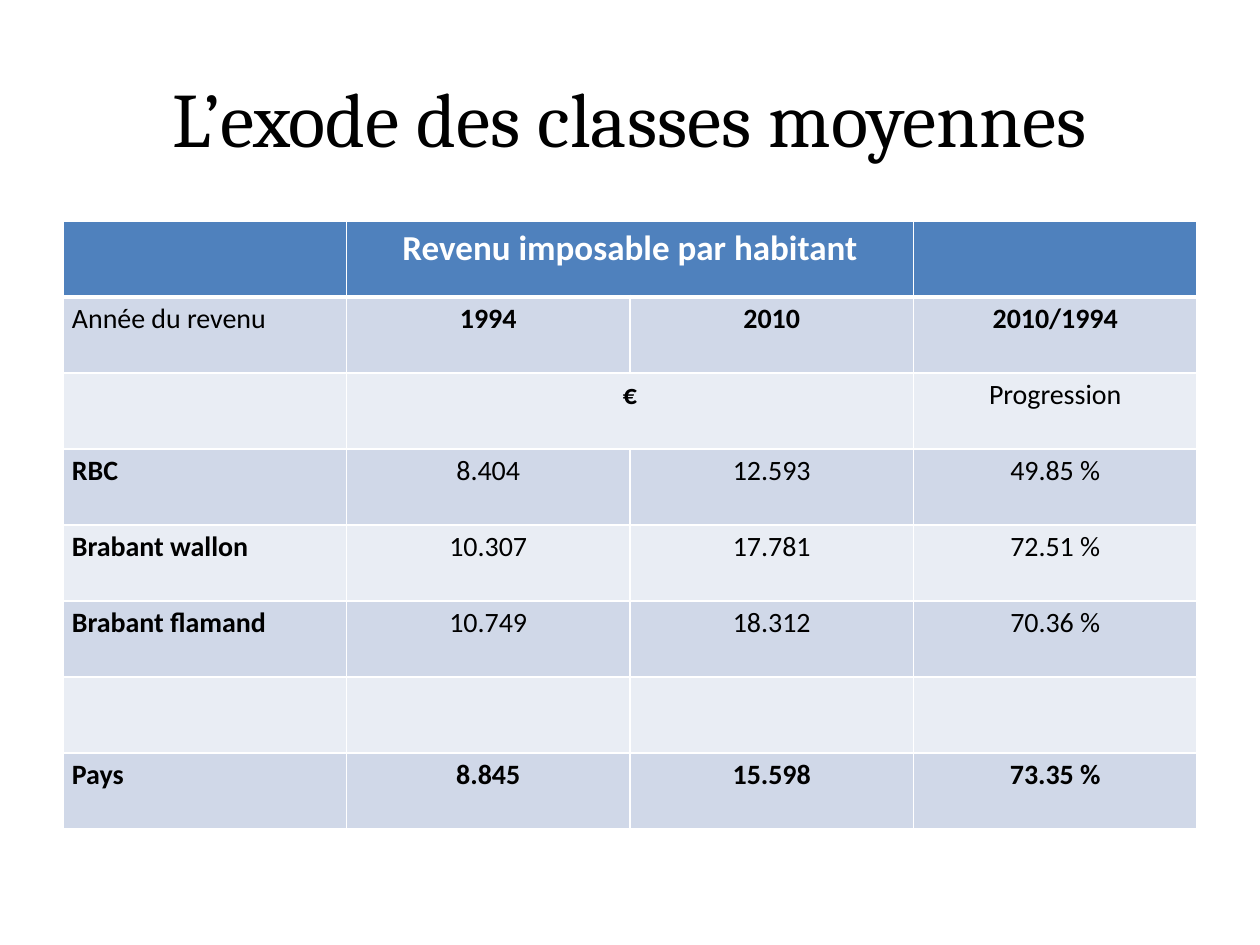
"""Build the slide on taxable income per inhabitant."""
import dataclasses

import lxml.etree
import pptx
import pptx.dml.color
import pptx.enum.text
import pptx.oxml.ns
import pptx.util

EMU_PER_PX = 914400 // 126
ALIGN = pptx.enum.text.PP_ALIGN
HEADER_FILL, ODD_FILL, EVEN_FILL = "4F81BD", "D0D8E8", "E9EDF4"
WHITE, BLACK = "FFFFFF", "000000"
COLUMN_WIDTH, ROW_HEIGHT, INSET = 2835 // 10, 76, 9


@dataclasses.dataclass(frozen=True)
class Entry:
    """Content of one table cell."""
    text: str = ""
    bold: bool = False
    align: ALIGN = ALIGN.CENTER
    span: int = 1


def px(length: int) -> int:
    """Turn pixels into EMU."""
    return pptx.util.Emu(length * EMU_PER_PX)


def colour(value: str) -> pptx.dml.color.RGBColor:
    """Turn a hex string into a colour."""
    return pptx.dml.color.RGBColor.from_string(value)


def add_run(paragraph, text: str, font: str, size: int, ink: str, bold: bool) -> None:
    """Add one formatted run to a paragraph."""
    run = paragraph.add_run()
    run.text = text
    run.font.name = font
    run.font.size = pptx.util.Pt(size)
    run.font.bold = bold
    run.font.color.rgb = colour(ink)


def set_borders(cell, top: int, bottom: int) -> None:
    """Give a cell white borders, with top and bottom widths in points."""
    properties = cell._tc.get_or_add_tcPr()
    sides = {"lnL": 1, "lnR": 1, "lnT": top, "lnB": bottom}
    for position, (side, width) in enumerate(sides.items()):
        line = lxml.etree.Element(pptx.oxml.ns.qn(f"a:{side}"), w=str(pptx.util.Pt(width)))
        fill = lxml.etree.SubElement(line, pptx.oxml.ns.qn("a:solidFill"))
        lxml.etree.SubElement(fill, pptx.oxml.ns.qn("a:srgbClr"), val=WHITE)
        properties.insert(position, line)


def style_cell(cell, row: int) -> None:
    """Set the fill and borders that belong to a row."""
    cell.fill.solid()
    cell.fill.fore_color.rgb = colour(
        HEADER_FILL if row == 0 else ODD_FILL if row % 2 else EVEN_FILL)
    set_borders(cell, top=3 if row == 1 else 1, bottom=3 if row == 0 else 1)


def write_entry(cell, entry: Entry, row: int) -> None:
    """Write the text of one cell."""
    cell.margin_left = cell.margin_right = px(INSET)
    cell.margin_top = cell.margin_bottom = 0
    paragraph = cell.text_frame.paragraphs[0]
    paragraph.alignment = entry.align
    paragraph.line_spacing = 1.15
    size, ink = (20, WHITE) if row == 0 else (16, BLACK)
    add_run(paragraph, entry.text, "Calibri", size, ink, entry.bold)


def region(name: str, *figures: str, bold: bool = False) -> list[Entry]:
    """Make the row of one region."""
    return [Entry(name, True, ALIGN.LEFT), *(Entry(figure, bold) for figure in figures)]


def add_income_table(slide, rows: list[list[Entry]]) -> None:
    """Add the income table."""
    columns = 4
    table = slide.shapes.add_table(
        len(rows), columns, px(63), px(221),
        px(columns * COLUMN_WIDTH), px(len(rows) * ROW_HEIGHT)).table
    for column in table.columns:
        column.width = pptx.util.Inches(2.25)
    for row, entries in enumerate(rows):
        table.rows[row].height = px(ROW_HEIGHT)
        for column in range(columns):
            style_cell(table.cell(row, column), row)
        column = 0
        for entry in entries:
            cell = table.cell(row, column)
            if entry.span > 1:
                cell.merge(table.cell(row, column + entry.span - 1))
            if entry.text:
                write_entry(cell, entry, row)
            column += entry.span


def add_title(slide, text: str) -> None:
    """Fill and place the title."""
    title = slide.shapes.title
    title.left, title.top, title.width, title.height = map(px, (63, 38, 1134, 157))
    title.text_frame.vertical_anchor = pptx.enum.text.MSO_ANCHOR.MIDDLE
    paragraph = title.text_frame.paragraphs[0]
    paragraph.alignment = ALIGN.CENTER
    add_run(paragraph, text, "Cambria", 44, BLACK, False)


def main() -> None:
    """Build and save the presentation."""
    presentation = pptx.Presentation()
    presentation.slide_width, presentation.slide_height = px(1260), px(945)
    slide = presentation.slides.add_slide(presentation.slide_layouts[5])
    add_title(slide, "L’exode des classes moyennes")
    add_income_table(slide, [
        [Entry(), Entry("Revenu imposable par habitant", True, span=2), Entry()],
        [Entry("Année du revenu", align=ALIGN.JUSTIFY),
         *(Entry(year, True) for year in ("1994", "2010", "2010/1994"))],
        [Entry(), Entry("€", True, span=2), Entry("Progression")],
        region("RBC", "8.404", "12.593", "49.85 %"),
        region("Brabant wallon", "10.307", "17.781", "72.51 %"),
        region("Brabant flamand", "10.749", "18.312", "70.36 %"),
        [],
        region("Pays", "8.845", "15.598", "73.35 %", bold=True),
    ])
    presentation.save("out.pptx")


if __name__ == "__main__":
    main()
